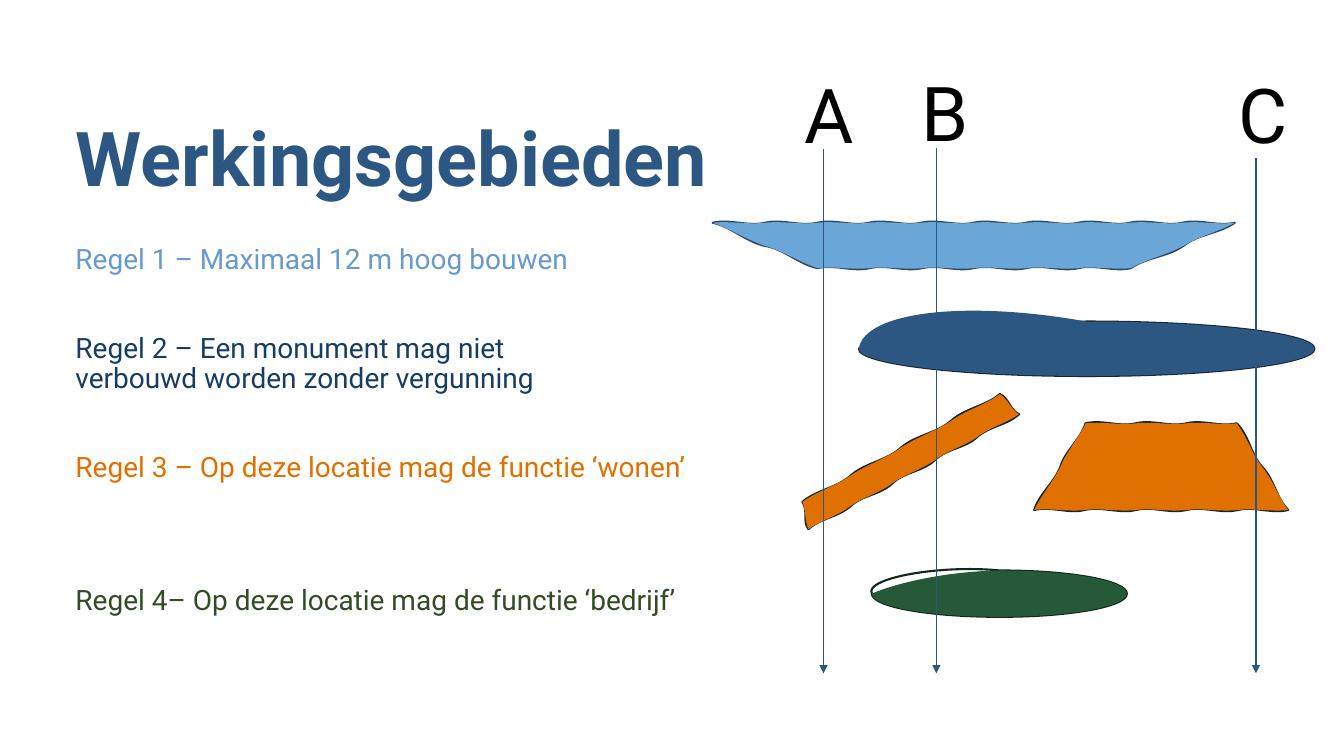
import math
import pptx
import pptx.util
import pptx.dml.color
import pptx.enum.shapes
import pptx.enum.text
import pptx.oxml
import pptx.oxml.ns
from lxml import etree

Pt = pptx.util.Pt
tag = pptx.oxml.ns.qn
FONT = "Roboto"
UNIT = 0.72
COLORS = {
    "blue": "2B5782", "sky": "679ACD", "navy": "163E64", "orange": "E07000",
    "moss": "334C26", "black": "000000", "water": "6BA6D9", "green": "265938",
    "ink": "132639", "water ink": "2F495F", "green ink": "112719",
}
RULES = [
    ("Regel 1 – Maximaal 12 m hoog bouwen", "sky", 0),
    ("Regel 2 – Een monument mag niet \vverbouwd worden zonder vergunning", "navy", 42),
    ("Regel 3 – Op deze locatie mag de functie ‘wonen’", "orange", 42),
    ("Regel 4– Op deze locatie mag de functie ‘bedrijf’", "moss", 73.5),
]
SECTIONS = [
    ("A", 63.36, 44.64, 84.24, 106.56),
    ("B", 146.88, 43.2, 164.88, 105.84),
    ("C", 373.68, 44.64, 393.12, 113.04),
]
ARROW_END = 480.96


def rgb(name):
    """Return the named colour."""
    return pptx.dml.color.RGBColor.from_string(COLORS[name])


def format_text(para, size, color, bold=False):
    """Format every run of a paragraph."""
    for span in para.runs:
        span.font.name = FONT
        span.font.size = Pt(size)
        span.font.bold = bold
        span.font.color.rgb = rgb(color)


def add_title(page, box):
    """Place the slide title in its box."""
    title = page.shapes.title
    title.left, title.top, title.width, title.height = map(Pt, box)
    frame = title.text_frame
    frame.text = "Werkingsgebieden"
    frame.auto_size = pptx.enum.text.MSO_AUTO_SIZE.NONE
    frame.vertical_anchor = pptx.enum.text.MSO_ANCHOR.BOTTOM
    para = frame.paragraphs[0]
    para.alignment = pptx.enum.text.PP_ALIGN.LEFT
    para.line_spacing = 0.9
    format_text(para, 54, "blue", True)


def add_rules(page, box):
    """List the four rules in their colours."""
    frame = page.shapes.add_textbox(*map(Pt, box)).text_frame
    frame.word_wrap = True
    for index, (text, color, gap) in enumerate(RULES):
        para = frame.add_paragraph() if index else frame.paragraphs[0]
        para.text = text
        para.line_spacing = 0.9
        para.space_before = Pt(gap)
        format_text(para, 20, color)


def wavy_polygon(corners, wave):
    """Return curve points that run along the sides in small waves."""
    points = [corners[0]]
    for (x1, y1), (x2, y2) in zip(corners, corners[1:] + corners[:1]):
        length = math.hypot(x2 - x1, y2 - y1)
        steps = max(1, round(length / 50))
        for third in range(1, 3 * steps + 1):
            part = third / (3 * steps)
            shift = (0, -wave, wave)[third % 3] / length
            points.append((round(x1 + (x2 - x1) * part - (y2 - y1) * shift),
                           round(y1 + (y2 - y1) * part + (x2 - x1) * shift)))
    return points


def loose_oval(left, top, width, height, bend):
    """Return curve points of an oval whose first quarter has its own bend."""
    rx, ry = width / 2, height / 2
    k = 0.55
    quarters = [(-1, 0), (-1, -k), (-k, -1), (0, -1), (k, -1), (1, -k), (1, 0),
                (1, k), (k, 1), (0, 1), (-k, 1), (-1, k), (-1, 0)]
    points = [(round(left + rx + rx * x), round(top + ry + ry * y)) for x, y in quarters]
    points[1:3] = bend
    return points


def add_contour(geometry, points, origin, attributes):
    """Add one closed curve to a freeform's list of contours."""
    contour = etree.SubElement(geometry, tag("a:path"), attributes)
    local = [(x - origin[0], y - origin[1]) for x, y in points]
    steps = [("a:moveTo", local[:1])]
    steps += [("a:cubicBezTo", local[i:i + 3]) for i in range(1, len(local), 3)]
    for name, group in steps:
        step = etree.SubElement(contour, tag(name))
        for x, y in group:
            etree.SubElement(step, tag("a:pt"), x=str(x), y=str(y))
    etree.SubElement(contour, tag("a:close"))


def add_area(page, box, fill, ink, edge, body):
    """Draw a sketched area with a loose outline."""
    anchors = edge[::3]
    builder = page.shapes.build_freeform(*anchors[0], scale=Pt(UNIT))
    builder.add_line_segments(anchors[1:], close=True)
    area = builder.convert_to_shape(Pt(box[0]), Pt(box[1]))
    area.shadow.inherit = False
    area.fill.solid()
    area.fill.fore_color.rgb = rgb(fill)
    area.line.color.rgb = rgb(ink)
    area.line.width = Pt(1.5)
    geometry = area._element.find(".//" + tag("a:pathLst"))
    size = {key: geometry[0].get(key) for key in ("w", "h")}
    geometry.remove(geometry[0])
    origin = [min(values) for values in zip(*anchors)]
    add_contour(geometry, edge, origin, {**size, "fill": "none"})
    add_contour(geometry, body, origin, {**size, "stroke": "0"})


def add_polygon_area(page, box, fill, ink, corners):
    """Draw an area with wavy sides."""
    add_area(page, box, fill, ink, wavy_polygon(corners, 4), wavy_polygon(corners, 2))


def add_oval_area(page, box, fill, ink, place, edge_bend, body_bend):
    """Draw a rounded area."""
    add_area(page, box, fill, ink, loose_oval(*place, edge_bend), loose_oval(*place, body_bend))


def add_section(page, box, letter, left, top, x, start):
    """Draw a lettered arrow down through the areas."""
    arrow = page.shapes.add_connector(
        pptx.enum.shapes.MSO_CONNECTOR.STRAIGHT, Pt(box[0] + x), Pt(box[1] + start),
        Pt(box[0] + x), Pt(box[1] + ARROW_END))
    arrow.line.color.rgb = rgb("blue")
    arrow.line.width = Pt(1)
    etree.SubElement(arrow.line._get_or_add_ln(), tag("a:tailEnd"), type="triangle")
    etree.SubElement(arrow._element.spPr, tag("a:effectLst"))
    label = page.shapes.add_textbox(Pt(box[0] + left), Pt(box[1] + top), Pt(38.16), Pt(64.08))
    frame = label.text_frame
    frame.word_wrap = True
    frame.auto_size = pptx.enum.text.MSO_AUTO_SIZE.SHAPE_TO_FIT_TEXT
    frame.text = letter
    frame.paragraphs[0].alignment = pptx.enum.text.PP_ALIGN.CENTER
    format_text(frame.paragraphs[0], 54, "black")


def add_diagram(page, box):
    """Stack the areas and cross them with the sections."""
    add_polygon_area(page, box, "orange", "ink", [(102, 525), (96, 498), (292, 391), (311, 411)])
    add_polygon_area(page, box, "orange", "ink", [(326, 506), (377, 420), (527, 420), (578, 506)])
    add_oval_area(page, box, "blue", "ink", (152, 319, 452, 54),
                  [(162, 335), (249, 322)], [(157, 310), (255, 297)])
    add_polygon_area(page, box, "water", "water ink", [(7, 221), (525, 221), (422, 266), (111, 266)])
    add_oval_area(page, box, "green", "green ink", (165, 566, 253, 46),
                  [(157, 574), (231, 560)], [(180, 582), (230, 567)])
    for section in SECTIONS:
        add_section(page, box, *section)


def main():
    """Build and save the deck."""
    deck = pptx.Presentation()
    deck.slide_width, deck.slide_height = Pt(960), Pt(540)
    page = deck.slides.add_slide(deck.slide_layouts[5])
    add_title(page, (46.8, 77.76, 828, 70.56))
    add_rules(page, (46.8, 171.36, 828, 308.88))
    add_diagram(page, (504, 0, 456, 540))
    deck.save("out.pptx")


if __name__ == "__main__":
    main()
